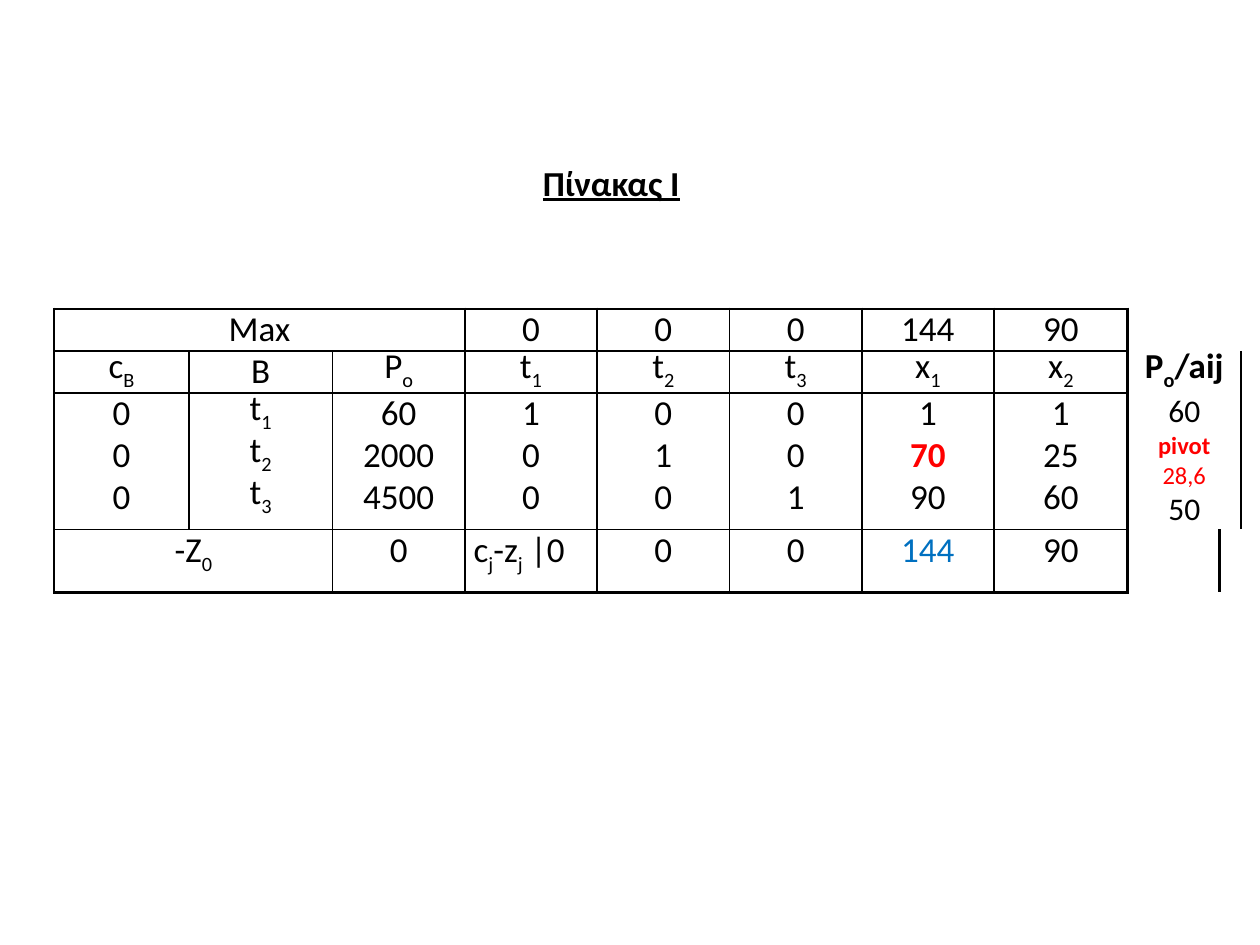
import pptx
import pptx.dml.color
import pptx.enum.text
import pptx.oxml.ns
import pptx.util
from lxml import etree

Inches = pptx.util.Inches
Align = pptx.enum.text.PP_ALIGN

THEME = {
    "font": "Calibri", "ink": "000000", "pivot": "FF0000", "entering": "0070C0",
    "size": 20, "ratio_size": 18, "pivot_size": 14, "line_spacing": 24,
    "outer_line": 1.5, "inner_line": 1,
    "plain_style": "{2D5ABB26-0587-4C30-8999-92F81FD0307C}",
}

# Content: "\n" parts paragraphs, "_" lowers the next character
TITLE = "Πίνακας I"
TABLEAU = [
    ["Max", "", "", "0", "0", "0", "144", "90", "", "", ""],
    ["c_B", "B", "P_o", "t_1", "t_2", "t_3", "x_1", "x_2", "P_o/aij", "", ""],
    ["0\n0\n0", "t_1\nt_2\nt_3", "60\n2000\n4500", "1\n0\n0", "0\n1\n0",
     "0\n0\n1", "1\n70\n90", "1\n25\n60", "60\npivot 28,6\n50", "", ""],
    ["-Z_0", "", "0", "c_j-z_j |0", "0", "0", "144", "90", "", "", ""],
]
COLUMN_WIDTHS = [1.07, 1.14] + [1.05] * 5 + [1.06, 0.73, 0.17, 0.17]
ROW_HEIGHTS = [0.33, 0.33, 1.07, 0.5]
MERGES = [(0, 0, 2), (0, 8, 10), (1, 8, 9), (2, 8, 9), (3, 0, 1), (3, 9, 10)]
GRID_COLUMNS = 8
RATIO_COLUMN = 8
PIVOT_CELL = (2, 6)
ENTERING_CELL = (3, 6)
REDUCED_COST_CELL = (3, 3)


def style_run(run, size=THEME["size"], color=THEME["ink"], bold=False):
    run.font.name = THEME["font"]
    run.font.size = pptx.util.Pt(size)
    run.font.bold = bold
    run.font.color.rgb = pptx.dml.color.RGBColor.from_string(color)


def add_run(paragraph, text, lowered=False, **style):
    if text:
        run = paragraph.add_run()
        run.text = text
        style_run(run, **style)
        if lowered:
            run.font._element.set("baseline", "-25000")


def write_line(paragraph, line, **style):
    head, *tails = line.split("_")
    add_run(paragraph, head, **style)
    for tail in tails:
        add_run(paragraph, tail[0], lowered=True, **style)
        add_run(paragraph, tail[1:], **style)


def line_style(row, column, line):
    if column == RATIO_COLUMN:
        return {"bold": True} if row == 1 else {"size": THEME["ratio_size"]}
    if (row, column) == PIVOT_CELL and line == "70":
        return {"color": THEME["pivot"], "bold": True}
    if (row, column) == ENTERING_CELL:
        return {"color": THEME["entering"]}
    return {}


def fill_cell(cell, row, column, text):
    cell.margin_left = cell.margin_right = Inches(0.07)
    cell.margin_top = cell.margin_bottom = 0
    for index, line in enumerate(text.split("\n")):
        frame = cell.text_frame
        paragraph = frame.add_paragraph() if index else frame.paragraphs[0]
        justified = (row, column) == REDUCED_COST_CELL
        paragraph.alignment = Align.JUSTIFY if justified else Align.CENTER
        if row < 2 or (row == 2 and column < GRID_COLUMNS):
            paragraph.line_spacing = pptx.util.Pt(THEME["line_spacing"])
        if line.startswith("pivot"):
            word, value = line.split()
            style = {"size": THEME["pivot_size"], "color": THEME["pivot"]}
            add_run(paragraph, word + " ", bold=True, **style)
            add_run(paragraph, value, **style)
        else:
            write_line(paragraph, line, **line_style(row, column, line))


def draw_borders(cell, row, column):
    outer, inner = THEME["outer_line"], THEME["inner_line"]
    sides = {}
    if column < GRID_COLUMNS:
        if not cell.is_spanned:
            sides["lnL"] = outer if column == 0 else inner
            sides["lnR"] = outer if column == GRID_COLUMNS - 1 else inner
        sides["lnT"] = outer if row == 0 else inner
        sides["lnB"] = outer if row == len(TABLEAU) - 1 else inner
    elif column == GRID_COLUMNS:
        sides["lnL"] = outer
    properties = cell._tc.get_or_add_tcPr()
    qn = pptx.oxml.ns.qn
    for side, width in sides.items():
        line = etree.SubElement(properties, qn("a:" + side), w=str(pptx.util.Pt(width)))
        fill = etree.SubElement(line, qn("a:solidFill"))
        etree.SubElement(fill, qn("a:srgbClr"), val=THEME["ink"])


def add_tableau(slide):
    frame = slide.shapes.add_table(
        len(TABLEAU), len(COLUMN_WIDTHS), Inches(0.43), Inches(2.45),
        Inches(sum(COLUMN_WIDTHS)), Inches(sum(ROW_HEIGHTS)))
    table = frame.table
    table.first_row = table.horz_banding = False
    style_id = table._tbl.tblPr.find(pptx.oxml.ns.qn("a:tableStyleId"))
    style_id.text = THEME["plain_style"]
    for column, width in zip(table.columns, COLUMN_WIDTHS):
        column.width = Inches(width)
    for row, height in zip(table.rows, ROW_HEIGHTS):
        row.height = Inches(height)
    for row, first, last in MERGES:
        table.cell(row, first).merge(table.cell(row, last))
    for row, texts in enumerate(TABLEAU):
        for column, text in enumerate(texts):
            cell = table.cell(row, column)
            fill_cell(cell, row, column, text)
            draw_borders(cell, row, column)
            cell.fill.background()


def add_title(slide):
    box = slide.shapes.add_textbox(Inches(4.21), Inches(1.23), Inches(1.43), Inches(0.77))
    box.text_frame.word_wrap = False
    box.text_frame.text = TITLE
    run = box.text_frame.paragraphs[0].runs[0]
    style_run(run, bold=True)
    run.font.underline = True


def main():
    presentation = pptx.Presentation()
    presentation.slide_width = Inches(10)
    presentation.slide_height = Inches(7.5)
    slide = presentation.slides.add_slide(presentation.slide_layouts[6])
    add_tableau(slide)
    add_title(slide)
    presentation.save("out.pptx")


if __name__ == "__main__":
    main()
